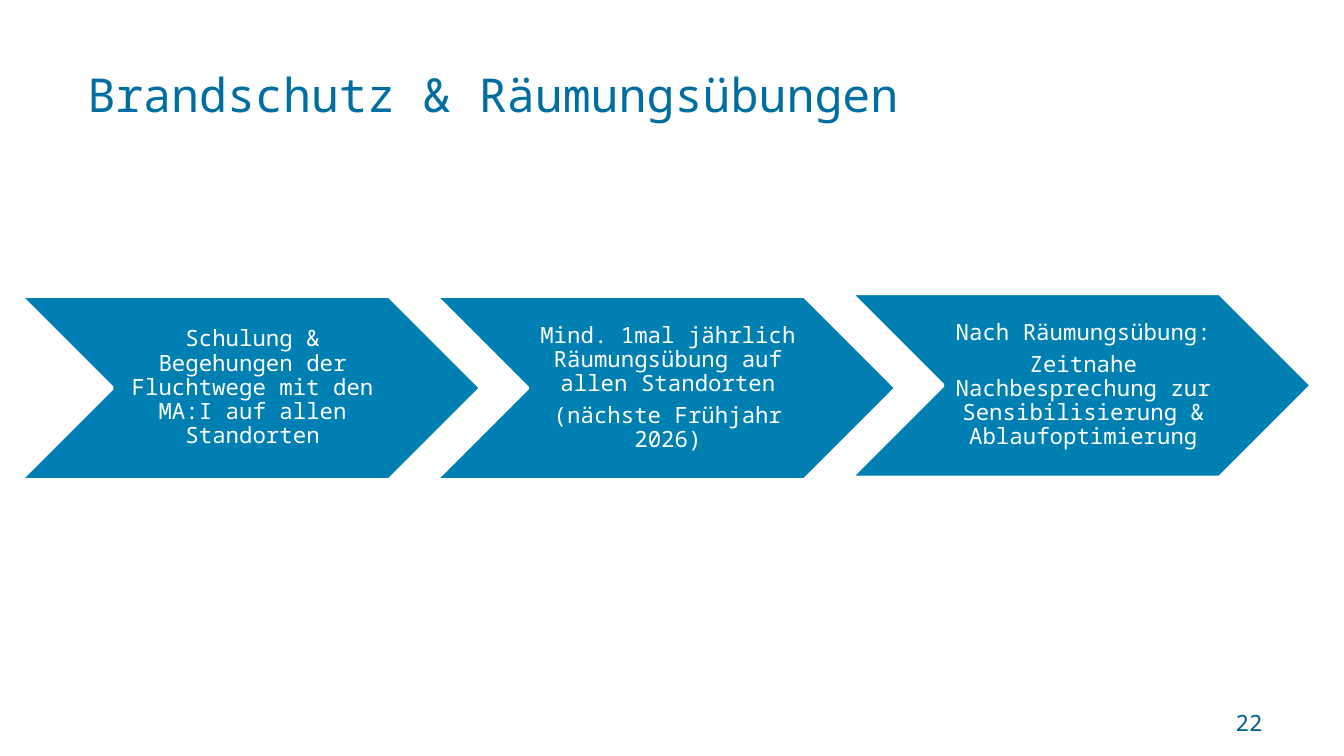
"""Build the slide on fire safety and evacuation drills."""
from pptx import Presentation
from pptx.dml.color import RGBColor
from pptx.enum.shapes import MSO_SHAPE
from pptx.enum.text import MSO_ANCHOR, PP_ALIGN
from pptx.util import Cm, Pt

TITLE = "Brandschutz & Räumungsübungen"
PAGE_NUMBER = "22"
STEPS = [
    (5.59, ["Schulung & Begehungen der Fluchtwege mit den MA:I auf allen Standorten"]),
    (5.59, ["Mind. 1mal jährlich Räumungsübung auf allen Standorten",
            "(nächste Frühjahr 2026)"]),
    (5.54, ["Nach Räumungsübung:",
            "Zeitnahe Nachbesprechung zur Sensibilisierung & Ablaufoptimierung"]),
]

FONT = "Noto Sans Mono"
TITLE_BLUE = RGBColor(0x00, 0x6E, 0xA0)
NUMBER_BLUE = RGBColor(0x00, 0x61, 0x8C)
STEP_BLUE = RGBColor(0x00, 0x7F, 0xB2)
WHITE = RGBColor(0xFF, 0xFF, 0xFF)

STEP_LEFT, STEP_PITCH = 0.38, 7.85
STEP_WIDTH, STEP_HEIGHT = 8.71, 3.48


def write_text(shape, paragraphs, *, size, color, align, margins=(0.25, 0.13, 0.25, 0.13),
               line_spacing=1.0, space_after=0):
    frame = shape.text_frame
    frame.word_wrap = True
    frame.vertical_anchor = MSO_ANCHOR.MIDDLE
    (frame.margin_left, frame.margin_top,
     frame.margin_right, frame.margin_bottom) = map(Cm, margins)
    frame.text = "\n".join(paragraphs)
    for paragraph in frame.paragraphs:
        paragraph.alignment = align
        paragraph.line_spacing = line_spacing
        paragraph.space_before = Pt(0)
        paragraph.space_after = Pt(space_after)
        paragraph.font.name = FONT
        paragraph.font.size = Pt(size)
        paragraph.font.color.rgb = color


def add_step(slide, index, top, paragraphs):
    chevron = slide.shapes.add_shape(
        MSO_SHAPE.CHEVRON, Cm(STEP_LEFT + index * STEP_PITCH), Cm(top),
        Cm(STEP_WIDTH), Cm(STEP_HEIGHT))
    chevron.shadow.inherit = False
    chevron.fill.solid()
    chevron.fill.fore_color.rgb = STEP_BLUE
    chevron.line.color.rgb = WHITE
    chevron.line.width = Pt(2)
    write_text(chevron, paragraphs, size=12, color=WHITE, align=PP_ALIGN.CENTER,
               margins=(0.13, 0.05, 0.05, 0.05), line_spacing=0.9, space_after=4.2)


def main():
    presentation = Presentation()
    presentation.slide_width, presentation.slide_height = Cm(25.4), Cm(14.28)
    slide = presentation.slides.add_slide(presentation.slide_layouts[5])

    title = slide.shapes.title
    title.left, title.top, title.width, title.height = Cm(1.4), Cm(0.58), Cm(18.82), Cm(2.39)
    write_text(title, [TITLE], size=25, color=TITLE_BLUE, align=PP_ALIGN.LEFT)

    for index, (top, paragraphs) in enumerate(STEPS):
        add_step(slide, index, top, paragraphs)

    number = slide.shapes.add_textbox(Cm(18.19), Cm(13.26), Cm(5.92), Cm(0.76))
    write_text(number, [PAGE_NUMBER], size=12, color=NUMBER_BLUE, align=PP_ALIGN.RIGHT)

    presentation.save("out.pptx")


if __name__ == "__main__":
    main()
